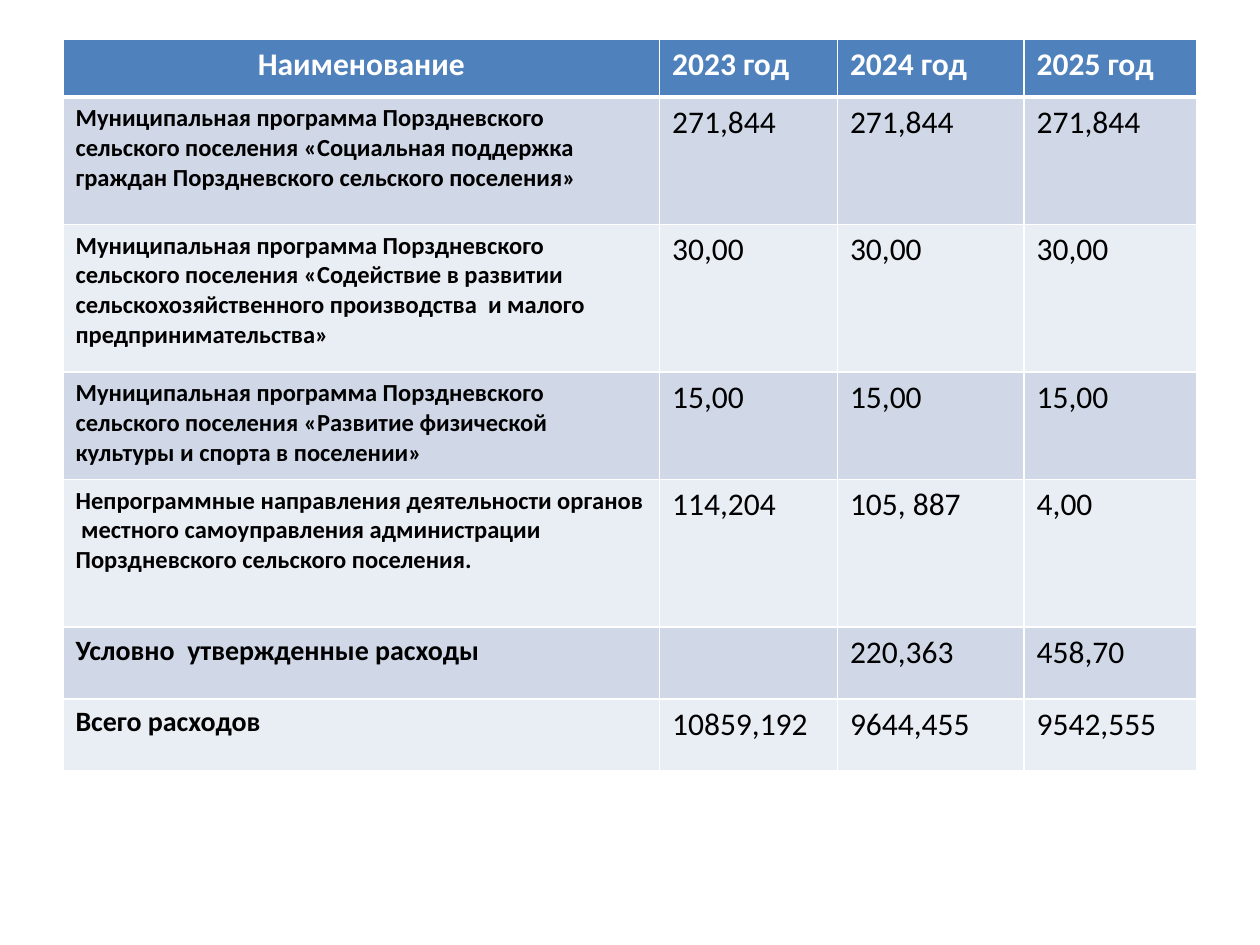
import pptx
import pptx.dml.color
import pptx.enum.text
import pptx.oxml
import pptx.oxml.ns
import pptx.util

Inches = pptx.util.Inches
Pt = pptx.util.Pt
ALIGN = pptx.enum.text.PP_ALIGN

HEADER_FILL = "4F81BD"
BAND_FILLS = ("D0D8E8", "E9EDF4")
COLUMN_WIDTHS = (4.73, 1.41, 1.48, 1.37)
ROW_HEIGHTS = (0.46, 1.01, 1.17, 0.85, 1.17, 0.57, 0.57)
SUMMARY_START = 5

BUDGET = (
    ("Наименование", "2023 год", "2024 год", "2025 год"),
    ("Муниципальная программа Порздневского сельского поселения "
     "«Социальная поддержка граждан Порздневского сельского поселения»",
     "271,844", "271,844", "271,844"),
    ("Муниципальная программа Порздневского сельского поселения "
     "«Содействие в развитии сельскохозяйственного производства  и малого  предпринимательства»",
     "30,00", "30,00", "30,00"),
    ("Муниципальная программа Порздневского сельского поселения "
     "«Развитие физической культуры и спорта в поселении»",
     "15,00", "15,00", "15,00"),
    ("Непрограммные направления деятельности органов  местного самоуправления "
     "администрации  Порздневского сельского поселения.",
     "114,204", "105, 887", "4,00"),
    ("Условно  утвержденные расходы", "", "220,363", "458,70"),
    ("Всего расходов", "10859,192", "9644,455", "9542,555"),
)

HEADER_FONT = {"size": Pt(18), "bold": True}
PROGRAM_FONT = {"size": Pt(14), "bold": True}
SUMMARY_FONT = {"size": Pt(16), "bold": True}
AMOUNT_FONT = {"size": Pt(18), "bold": False}


def paint(target, color):
    target.rgb = pptx.dml.color.RGBColor.from_string(color)


def add_borders(cell, top=1, bottom=1):
    properties = cell._tc.get_or_add_tcPr()
    for side, width in {"L": 1, "R": 1, "T": top, "B": bottom}.items():
        properties.append(pptx.oxml.parse_xml(
            f'<a:ln{side} {pptx.oxml.ns.nsdecls("a")} w="{Pt(width)}">'
            f'<a:solidFill><a:srgbClr val="FFFFFF"/></a:solidFill></a:ln{side}>'))


def cell_font(row, column):
    if row == 0:
        return HEADER_FONT
    if column > 0:
        return AMOUNT_FONT
    return SUMMARY_FONT if row >= SUMMARY_START else PROGRAM_FONT


def fill_cell(cell, text, row, column):
    add_borders(cell, top=3 if row == 1 else 1, bottom=3 if row == 0 else 1)
    cell.fill.solid()
    paint(cell.fill.fore_color, BAND_FILLS[(row - 1) % 2] if row else HEADER_FILL)
    cell.text = text
    paragraph = cell.text_frame.paragraphs[0]
    paragraph.alignment = ALIGN.CENTER if row == column == 0 else ALIGN.LEFT
    for run in paragraph.runs:
        for attribute, value in {"name": "Calibri", **cell_font(row, column)}.items():
            setattr(run.font, attribute, value)
        paint(run.font.color, "000000" if row else "FFFFFF")


def add_budget_table(slide, left, top, width, height):
    table = slide.shapes.add_table(
        len(BUDGET), len(COLUMN_WIDTHS), left, top, width, height).table
    for column, share in zip(table.columns, COLUMN_WIDTHS):
        column.width = int(width * share / sum(COLUMN_WIDTHS))
    for row, share in zip(table.rows, ROW_HEIGHTS):
        row.height = int(height * share / sum(ROW_HEIGHTS))
    for row, entries in enumerate(BUDGET):
        for column, text in enumerate(entries):
            fill_cell(table.cell(row, column), text, row, column)


def main():
    deck = pptx.Presentation()
    deck.slide_width = Inches(10)
    deck.slide_height = Inches(7.5)
    slide = deck.slides.add_slide(deck.slide_layouts[6])
    add_budget_table(slide, Inches(0.5), Inches(0.31), Inches(9), Inches(5.81))
    deck.save("out.pptx")


if __name__ == "__main__":
    main()
